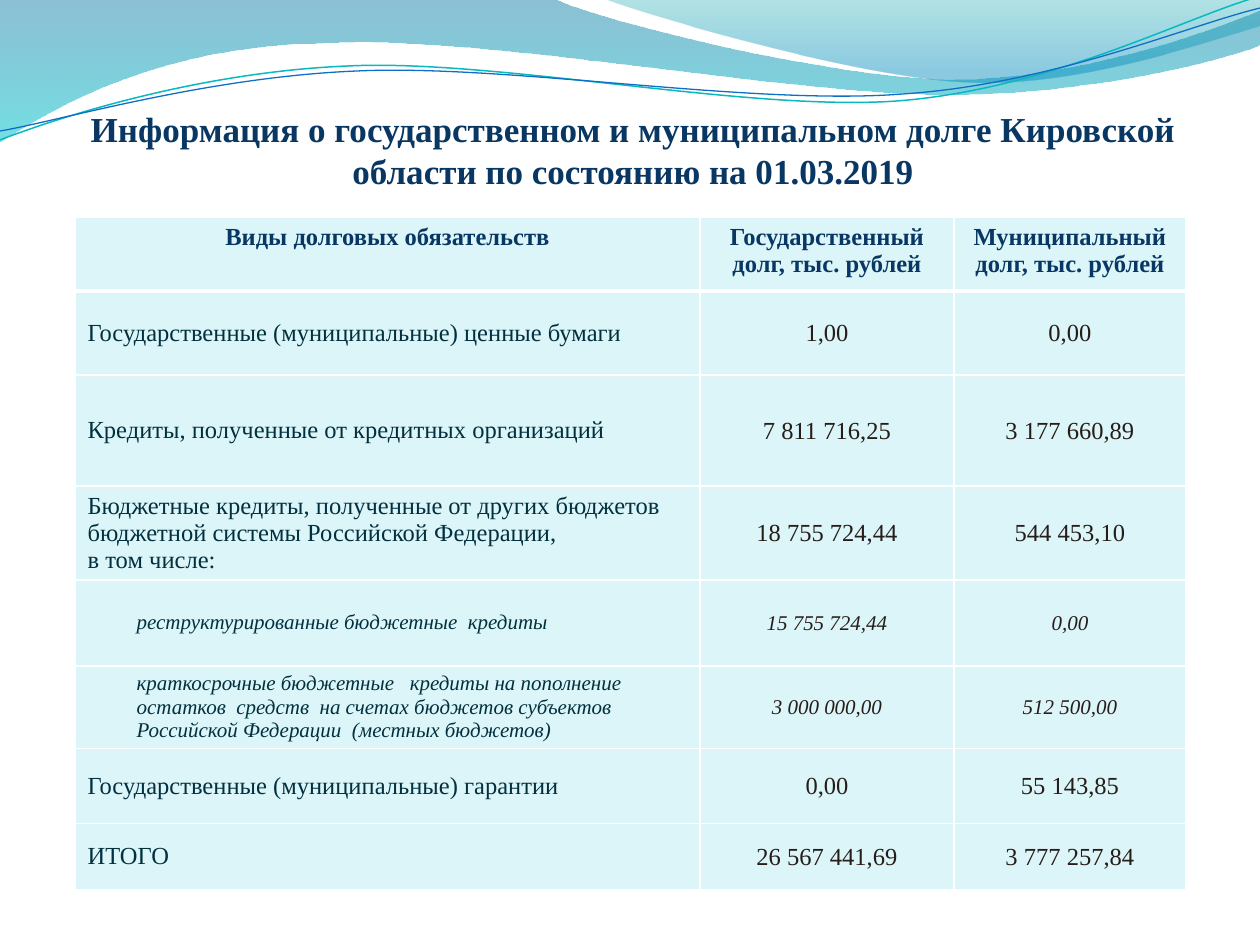
import math

import pptx
import pptx.util
import pptx.dml.color
import pptx.enum.text
import pptx.oxml
import pptx.oxml.ns

SCALE = 914400 / 126
FONT = "Times New Roman"
RGB = pptx.dml.color.RGBColor
NAVY = RGB(0x08, 0x37, 0x63)
LABEL = RGB(0x02, 0x30, 0x3E)
NUMBER = RGB(0x27, 0x1D, 0x18)
CELL = RGB(0xDB, 0xF5, 0xF9)
WHITE = RGB(0xFF, 0xFF, 0xFF)
SEA = RGB(0x00, 0x74, 0xA1)
TURQUOISE = RGB(0x00, 0xC6, 0xCF)
TEAL = RGB(0x00, 0xA1, 0xA9)
AZURE = RGB(0x00, 0x8B, 0xBF)
TEAL_LINE = RGB(0x0A, 0xB8, 0xBF)
BLUE_LINE = RGB(0x0F, 0x6F, 0xC6)
CENTER = pptx.enum.text.PP_ALIGN.CENTER
LEFT = pptx.enum.text.PP_ALIGN.LEFT
TOP = pptx.enum.text.MSO_ANCHOR.TOP
MIDDLE = pptx.enum.text.MSO_ANCHOR.MIDDLE
CURVE_TILT = -2.7

TITLE = "Информация о государственном и муниципальном долге Кировской области по состоянию на 01.03.2019"
COLUMNS = [625, 254, 232]
HEADERS = ["Виды долговых обязательств", "Государственный долг, тыс. рублей",
           "Муниципальный долг, тыс. рублей"]
HEADER_HEIGHT = 74
TABLE_HEIGHT = 687
DEBTS = [
    (84, False, "Государственные (муниципальные) ценные бумаги", "1,00", "0,00"),
    (111, False, "Кредиты, полученные от кредитных организаций", "7 811 716,25", "3 177 660,89"),
    (81, False, "Бюджетные кредиты, полученные от других бюджетов бюджетной системы "
     "Российской Федерации, \nв том числе:", "18 755 724,44", "544 453,10"),
    (86, True, "реструктурированные бюджетные  кредиты", "15 755 724,44", "0,00"),
    (75, True, "краткосрочные бюджетные   кредиты на пополнение остатков  средств  на счетах "
     "бюджетов субъектов  Российской Федерации  (местных бюджетов)", "3 000 000,00", "512 500,00"),
    (75, False, "Государственные (муниципальные) гарантии", "0,00", "55 143,85"),
    (66, False, "ИТОГО", "26 567 441,69", "3 777 257,84"),
]

BROAD_WAVE = [(0, 0), (554, -1), (600, 21, 837, 79, 955, 79), (1074, 79, 1207, 33, 1260, 11),
              (1261, 45), (1239, 55, 1096, 96, 940, 94), (784, 94, 481, 35, 324, 43),
              (163, 45, 58, 105, -1, 142), (0, 0)]
RIGHT_WAVE = [(604, -1), (641, 14, 859, 78, 969, 82), (1079, 87, 1211, 40, 1260, 26),
              (1260, 0), (604, -1)]
TEAL_CURVE = [(0, 140), (60, 117, 199, 72, 349, 66), (498, 59, 747, 112, 898, 101),
              (1050, 89, 1182, 19, 1257, -3)]
BLUE_CURVE = [(0, 131), (59, 121, 207, 77, 357, 71), (508, 64, 752, 106, 903, 94),
              (1053, 84, 1186, 26, 1260, 8)]


def px(length):
    return pptx.util.Emu(round(length * SCALE))


def turn(x, y, pivot, degrees):
    angle = math.radians(degrees)
    dx, dy = x - pivot[0], y - pivot[1]
    return (pivot[0] + dx * math.cos(angle) - dy * math.sin(angle),
            pivot[1] + dx * math.sin(angle) + dy * math.cos(angle))


def bend(shape, segments):
    outline = shape.element.find(".//" + pptx.oxml.ns.qn("a:path"))
    lines = iter(outline.findall(pptx.oxml.ns.qn("a:lnTo")))
    for segment in segments[1:]:
        line = next(lines)
        if len(segment) == 6:
            curve = pptx.oxml.parse_xml(f'<a:cubicBezTo {pptx.oxml.ns.nsdecls("a")}/>')
            line.addprevious(curve)
            for control in (line, next(lines), next(lines)):
                curve.append(control[0])
                outline.remove(control)


def add_outline(shapes, segments, close=False, pivot=(0, 0), tilt=0):
    points = [turn(*segment[start:start + 2], pivot, -tilt)
              for segment in segments for start in range(0, len(segment), 2)]
    builder = shapes.build_freeform(px(points[0][0]), px(points[0][1]), scale=1.0)
    builder.add_line_segments([(px(x), px(y)) for x, y in points[1:]], close=close)
    shape = builder.convert_to_shape()
    bend(shape, segments)
    shape.rotation = tilt
    shape.shadow.inherit = False
    return shape


def add_wave(page, segments, stops):
    shape = add_outline(page.shapes, segments, close=True)
    shape.line.fill.background()
    shape.fill.gradient()
    shape.fill.gradient_angle = 270
    for stop, (position, color, opacity) in zip(shape.fill.gradient_stops, stops):
        stop.position = position
        stop.color.rgb = color
    colors = shape.element.spPr.findall(".//" + pptx.oxml.ns.qn("a:srgbClr"))
    for element, (position, color, opacity) in zip(colors, stops):
        element.append(pptx.oxml.parse_xml(
            f'<a:alpha {pptx.oxml.ns.nsdecls("a")} val="{opacity * 1000}"/>'))


def add_curve(group, segments, pivot, color, width):
    shape = add_outline(group.shapes, segments, pivot=pivot, tilt=CURVE_TILT)
    shape.fill.background()
    shape.line.color.rgb = color
    shape.line.width = pptx.util.Pt(width)


def write(para, text, size, color, bold=False, italic=False, align=LEFT):
    para.alignment = align
    for index, line in enumerate(text.split("\n")):
        if index:
            para.add_line_break()
        span = para.add_run()
        span.text = line
        span.font.name = FONT
        span.font.size = pptx.util.Pt(size)
        span.font.bold = bold
        span.font.italic = italic
        span.font.color.rgb = color


def place_title(page):
    box = page.shapes.title
    box.left, box.top, box.width, box.height = px(36), px(73), px(1194), px(119)
    frame = box.text_frame
    frame.word_wrap = True
    frame.auto_size = pptx.enum.text.MSO_AUTO_SIZE.NONE
    frame.vertical_anchor = pptx.enum.text.MSO_ANCHOR.BOTTOM
    frame.margin_left = frame.margin_right = frame.margin_bottom = 0
    frame.margin_top = px(6)
    write(frame.paragraphs[0], TITLE, 20, NAVY, bold=True, align=CENTER)
    box.element.getparent().append(box.element)


def style_cell(cell, anchor, top=1, bottom=1):
    properties = cell._tc.get_or_add_tcPr()
    for side, width in (("L", 1), ("R", 1), ("T", top), ("B", bottom)):
        properties.append(pptx.oxml.parse_xml(
            f'<a:ln{side} {pptx.oxml.ns.nsdecls("a")} w="{pptx.util.Pt(width)}">'
            f'<a:solidFill><a:srgbClr val="{WHITE}"/></a:solidFill></a:ln{side}>'))
    cell.fill.solid()
    cell.fill.fore_color.rgb = CELL
    cell.vertical_anchor = anchor


def add_debt_row(table, row, debt):
    height, nested, label, *amounts = debt
    table.rows[row].height = px(height)
    size = 12 if nested else 14
    for column, text in enumerate([label, *amounts]):
        cell = table.cell(row, column)
        style_cell(cell, MIDDLE, top=3 if row == 1 else 1)
        para = cell.text_frame.paragraphs[0]
        if column:
            cell.margin_left = cell.margin_right = cell.margin_top = px(1)
            cell.margin_bottom = 0
            write(para, text, size, NUMBER, italic=nested, align=CENTER)
        else:
            if nested:
                para._p.get_or_add_pPr().set("marL", str(px(49)))
            write(para, text, size, LABEL, italic=nested)


def add_debt_table(page):
    frame = page.shapes.add_table(len(DEBTS) + 1, len(COLUMNS), px(75), px(217),
                                  px(sum(COLUMNS)), px(TABLE_HEIGHT))
    table = frame.table
    table.horz_banding = False
    table.rows[0].height = px(HEADER_HEIGHT)
    for column, (width, header) in enumerate(zip(COLUMNS, HEADERS)):
        table.columns[column].width = px(width)
        cell = table.cell(0, column)
        style_cell(cell, TOP, bottom=3)
        write(cell.text_frame.paragraphs[0], header, 14, NAVY, bold=True, align=CENTER)
    for row, debt in enumerate(DEBTS, 1):
        add_debt_row(table, row, debt)
    frame.height = px(TABLE_HEIGHT)


def main():
    deck = pptx.Presentation()
    deck.slide_width, deck.slide_height = px(1260), px(945)
    page = deck.slides.add_slide(deck.slide_layouts[5])
    add_wave(page, BROAD_WAVE, [(0, SEA, 45), (1, TURQUOISE, 55)])
    add_wave(page, RIGHT_WAVE, [(0, TEAL, 30), (0.8, AZURE, 45)])
    curves = page.shapes.add_group_shape()
    add_curve(curves, TEAL_CURVE, (629, 72), TEAL_LINE, 0.85)
    add_curve(curves, BLUE_CURVE, (629, 74), BLUE_LINE, 0.75)
    place_title(page)
    add_debt_table(page)
    deck.save("out.pptx")


if __name__ == "__main__":
    main()
